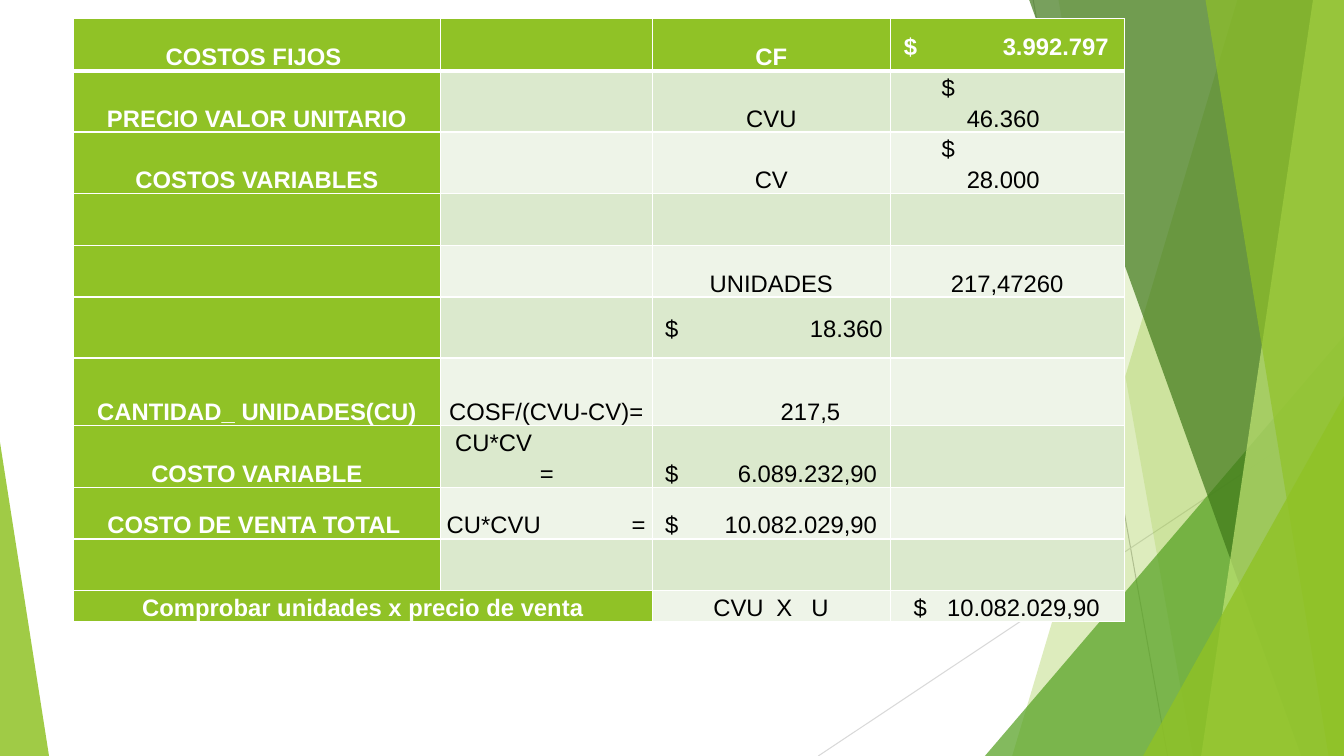
from itertools import pairwise
from lxml.etree import SubElement
from pptx import Presentation
from pptx.dml.color import RGBColor
from pptx.enum.shapes import MSO_CONNECTOR as Connector, MSO_SHAPE as Shape
from pptx.enum.text import MSO_ANCHOR as Anchor, PP_ALIGN as Align
from pptx.oxml.ns import qn
from pptx.util import Pt

COLORS = {
    "white": "FFFFFF", "black": "000000", "lime": "90C226", "green": "54A021",
    "forest": "3F7819", "pale lime": "C0E474", "gray": "BFBFBF",
    "light gray": "D9D9D9", "odd row": "DBE9CD", "even row": "EEF4E8",
}
COLUMNS = [262, 151.5, 170, 167]
ROWS = [37, 43.5, 43.5, 37, 37, 43.5, 48.5, 43.5, 37, 37, 21.5]


def money(amount, left=5.5, right=157):
    """A dollar sign and an amount, set apart by tab stops on one line."""
    return [[(left, "l", "$"), (right, "r", amount)]]


def stacked(first, second, left, indent):
    """Two lines, each with its own indent."""
    return [[(left, "l", first)], [(indent, "l", second)]]


# A cell is centred text, or lines of (tab position, tab alignment, text)
COSTS = [
    ["COSTOS FIJOS ", "", "CF", money("3.992.797", 6, 152.5)],
    ["PRECIO VALOR UNITARIO", "", "CVU", stacked("$", "46.360", 33, 51)],
    ["COSTOS VARIABLES", "", "CV", stacked("$", "28.000", 33, 51)],
    ["", "", "", ""],
    ["", "", "UNIDADES", "217,47260"],
    ["", "", money("18.360", right=161), ""],
    ["CANTIDAD_ UNIDADES(CU)", "COSF/(CVU-CV)=", [[(88, "l", "217,5")]], ""],
    ["COSTO VARIABLE", stacked("CU*CV", "=", 7, 67.5), money("6.089.232,90"), ""],
    ["COSTO DE VENTA TOTAL ", [[(1, "l", "CU*CVU"), (143, "r", "=")]],
     money("10.082.029,90"), ""],
    ["", "", "", ""],
    ["Comprobar unidades x precio de venta", "",
     [[(40, "l", "CVU"), (85, "l", "X"), (110, "l", "U")]],
     money("10.082.029,90", 13, 146)],
]
MIDDLE_CELLS = {(0, 3), (5, 2), (10, 0)}


def rgb(name):
    return RGBColor.from_string(COLORS[name])


def paint(shape, color, opacity):
    shape.shadow.inherit = False
    shape.line.fill.background()
    shape.fill.solid()
    shape.fill.fore_color.rgb = rgb(color)
    tint = shape.fill._xPr.find(".//" + qn("a:srgbClr"))
    SubElement(tint, qn("a:alpha"), val=str(opacity * 1000))


def add_line(page, box, start, end, color):
    left, top = box[:2]
    line = page.shapes.add_connector(
        Connector.STRAIGHT, Pt(left + start[0]), Pt(top + start[1]),
        Pt(left + end[0]), Pt(top + end[1]))
    line.line.color.rgb = rgb(color)
    line.line.width = Pt(0.75)
    SubElement(line._element.spPr, qn("a:effectLst"))


def add_band(page, box, top_x, bottom_x, color, opacity):
    """A facet from a slanted left edge to the right side of the box."""
    left, top, width, height = box
    upper, lower, right = top - 0.5, top + height, left + width
    outline = page.shapes.build_freeform(Pt(left + top_x), Pt(upper))
    corners = [(right, upper), (right, lower), (left + bottom_x, lower)]
    outline.add_line_segments([(Pt(x), Pt(y)) for x, y in corners], close=True)
    paint(outline.convert_to_shape(), color, opacity)


def add_corner(page, box, x, width, height, peak, color, opacity):
    """A right triangle that stands on the bottom of the box."""
    left, top, _, box_height = box
    corner = page.shapes.add_shape(
        Shape.ISOSCELES_TRIANGLE, Pt(left + x), Pt(top + box_height - height),
        Pt(width), Pt(height))
    corner.adjustments[0] = peak
    paint(corner, color, opacity)


def add_facets(page, box):
    width, height = box[2:]
    add_line(page, box, (738, 0), (834, height), "gray")
    add_line(page, box, (width, 290), (584.5, height), "light gray")
    add_band(page, box, 884, 723, "lime", 30)
    add_band(page, box, 756, 852, "lime", 20)
    add_corner(page, box, 703.5, 256.5, 300, 1, "green", 72)
    add_band(page, box, 735, 929.5, "forest", 70)
    add_band(page, box, 938, 858, "pale lime", 70)
    add_band(page, box, 861, 949, "lime", 65)
    add_corner(page, box, 816.5, 143.5, 257, 1, "lime", 80)
    add_corner(page, box, 0, 35, 224, 0, "lime", 85)


def add_borders(cell, header):
    properties = cell._tc.get_or_add_tcPr()
    for side in "LRTB":
        weight = 3 if header and side == "B" else 1
        edge = SubElement(properties, qn("a:ln" + side), w=str(Pt(weight)))
        fill = SubElement(edge, qn("a:solidFill"))
        SubElement(fill, qn("a:srgbClr"), val=COLORS["white"])


def fill_cell(cell, content, strong):
    lines = [content] if isinstance(content, str) else content
    for index, line in enumerate(lines):
        frame = cell.text_frame
        para = frame.add_paragraph() if index else frame.paragraphs[0]
        para.line_spacing = 1.15
        para.alignment = Align.CENTER
        words = line
        if not isinstance(line, str):
            para.alignment = Align.LEFT
            words = "".join("\t" + text for _, _, text in line)
            stops = SubElement(para._p.get_or_add_pPr(), qn("a:tabLst"))
            for position, align, _ in line:
                SubElement(stops, qn("a:tab"), pos=str(Pt(position)), algn=align)
        span = para.add_run()
        span.text = words
        font_format = {"name": "Arial", "size": Pt(17), "bold": strong}
        for name, value in font_format.items():
            setattr(span.font, name, value)
        span.font.color.rgb = rgb("white" if strong else "black")


def add_cost_table(page, box):
    frame = page.shapes.add_table(len(ROWS), len(COLUMNS), *map(Pt, box))
    table = frame.table
    table.first_col = True
    for column, width in zip(table.columns, COLUMNS):
        column.width = Pt(width)
    for row, height in zip(table.rows, ROWS):
        row.height = Pt(height)
    table.cell(10, 0).merge(table.cell(10, 1))

    for r, contents in enumerate(COSTS):
        for c, content in enumerate(contents):
            cell = table.cell(r, c)
            strong = r == 0 or c == 0
            add_borders(cell, r == 0)
            cell.fill.solid()
            stripe = "odd row" if r % 2 else "even row"
            cell.fill.fore_color.rgb = rgb("lime" if strong else stripe)
            if content:
                middle = (r, c) in MIDDLE_CELLS
                cell_format = {
                    "margin_left": Pt(3.6), "margin_right": Pt(3.6),
                    "margin_top": 0, "margin_bottom": 0,
                    "vertical_anchor": Anchor.MIDDLE if middle else Anchor.BOTTOM,
                }
                for name, value in cell_format.items():
                    setattr(cell, name, value)
                fill_cell(cell, content, strong)


def main():
    deck = Presentation()
    deck.slide_width, deck.slide_height = Pt(960), Pt(540)
    page = deck.slides.add_slide(deck.slide_layouts[6])
    add_facets(page, (0, 0, 960, 540))
    add_cost_table(page, (52.5, 13.5, sum(COLUMNS), sum(ROWS)))
    deck.save("out.pptx")


if __name__ == "__main__":
    main()
